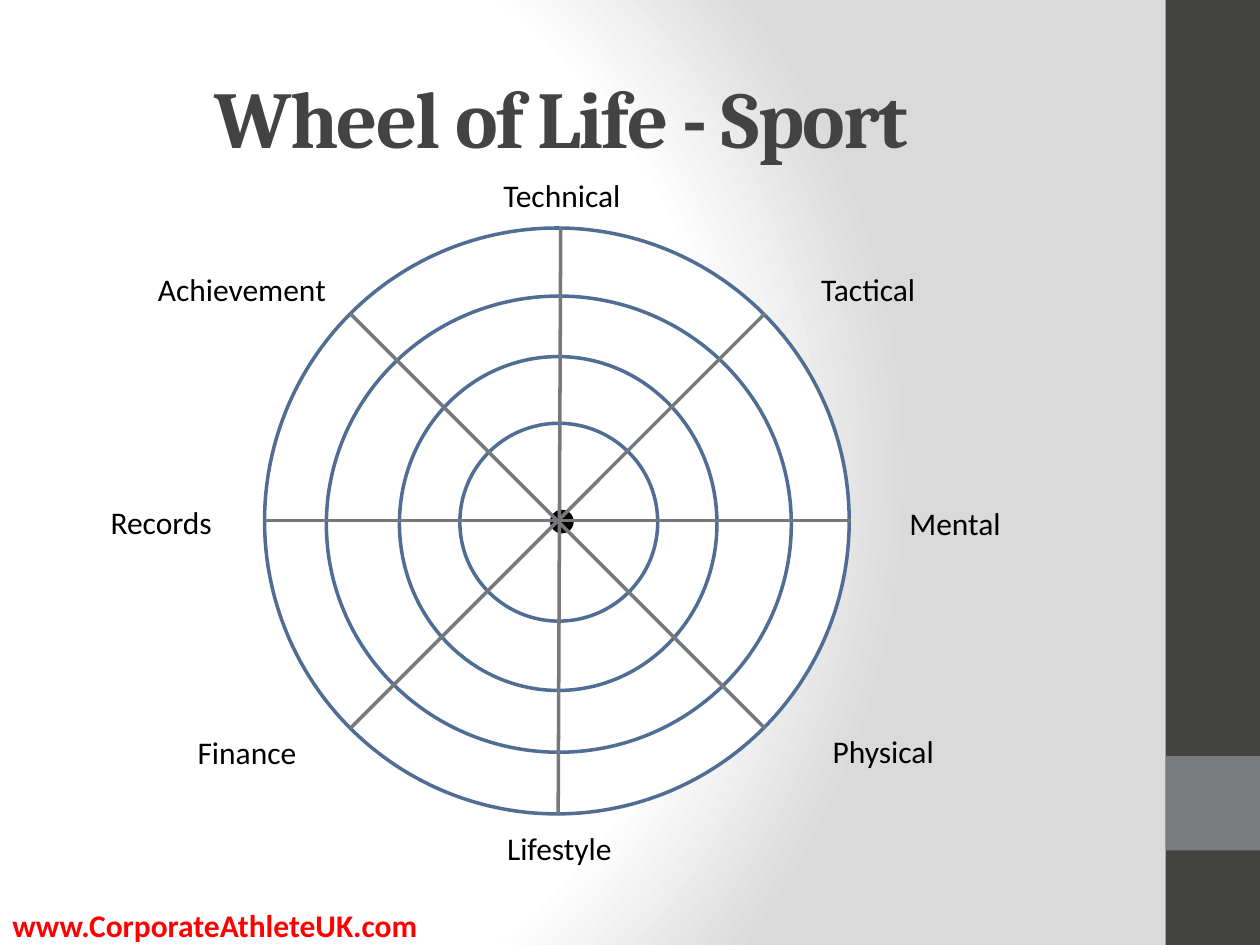
from dataclasses import dataclass

from lxml.etree import SubElement
from pptx import Presentation
from pptx.dml.color import RGBColor
from pptx.enum.shapes import MSO_CONNECTOR, MSO_SHAPE
from pptx.enum.text import MSO_ANCHOR, MSO_AUTO_SIZE, PP_ALIGN
from pptx.oxml import parse_xml
from pptx.oxml.ns import nsdecls, qn
from pptx.util import Inches, Pt


@dataclass(frozen=True)
class Theme:
    white: str = "FFFFFF"
    black: str = "000000"
    shade: str = "DADADA"
    dark: str = "434342"
    grey: str = "797B7E"
    ring: str = "506E94"
    spoke: str = "76787B"
    red: str = "FF0000"
    title_font: str = "Cambria"
    body_font: str = "Calibri"
    title_size: int = 46
    body_size: int = 18
    line_width: int = 2


THEME = Theme()

RINGS = [
    (2.1, 1.81, 4.64, 4.65),
    (2.59, 2.35, 3.69, 3.62),
    (3.17, 2.83, 2.52, 2.65),
    (3.65, 3.36, 1.57, 1.57),
]
HUB = (4.38, 4.06, 0.16, 0.16)
SPOKES = [
    (2.1, 4.13, 6.75, 4.13),
    (4.45, 1.81, 4.43, 6.46),
    (2.78, 2.49, 6.07, 5.78),
    (6.07, 2.49, 2.78, 5.78),
]
LABEL_WIDTH, LABEL_HEIGHT = 1.64, 0.4
LABELS = [
    ("Technical", 3.64, 1.35),
    ("Tactical", 6.07, 2.09),
    ("Mental", 6.76, 3.95),
    ("Physical", 6.19, 5.76),
    ("Lifestyle", 3.62, 6.53),
    ("Finance", 1.14, 5.77),
    ("Records", 0.46, 3.94),
    ("Achievement", 1.1, 2.09),
]


def rgb(color):
    return RGBColor.from_string(color)


def set_background(slide):
    """Fill the background with a circular gradient, white in the left half."""
    slide.background.fill.solid()
    bg = slide.element.find(".//" + qn("p:bgPr"))
    stops = "".join(
        f'<a:gs pos="{pos * 1000}"><a:srgbClr val="{color}"/></a:gs>'
        for pos, color in [(0, THEME.white), (75, THEME.white), (100, THEME.shade)]
    )
    gradient = parse_xml(
        f'<a:gradFill {nsdecls("a")} rotWithShape="1"><a:gsLst>{stops}</a:gsLst>'
        '<a:path path="circle">'
        '<a:fillToRect l="20000" t="50000" r="100000" b="50000"/>'
        "</a:path></a:gradFill>"
    )
    bg.replace(bg.find(qn("a:solidFill")), gradient)


def add_filled(slide, kind, box, fill, line=None):
    sp = slide.shapes.add_shape(kind, *map(Inches, box))
    sp.shadow.inherit = False
    sp.fill.solid()
    sp.fill.fore_color.rgb = rgb(fill)
    if line:
        sp.line.color.rgb = rgb(line)
        sp.line.width = Pt(THEME.line_width)
    else:
        sp.line.fill.background()


def add_spoke(slide, ends):
    line = slide.shapes.add_connector(MSO_CONNECTOR.STRAIGHT, *map(Inches, ends))
    line.line.color.rgb = rgb(THEME.spoke)
    line.line.width = Pt(THEME.line_width)
    SubElement(line.element.spPr, qn("a:effectLst"))


def add_text(slide, text, box, color=THEME.black, size=THEME.body_size,
             font=THEME.body_font, bold=False, align=PP_ALIGN.CENTER):
    """Add a one-line text box; return its frame and run for further styling."""
    tf = slide.shapes.add_textbox(*map(Inches, box)).text_frame
    tf.word_wrap = True
    tf.auto_size = MSO_AUTO_SIZE.SHAPE_TO_FIT_TEXT
    p = tf.paragraphs[0]
    p.alignment = align
    r = p.add_run()
    r.text = text
    r.font.name = font
    r.font.size = Pt(size)
    r.font.bold = bold
    r.font.color.rgb = rgb(color)
    return tf, r


def add_title(slide, text):
    tf, r = add_text(slide, text, (0.29, 0.3, 8.33, 1.25), THEME.dark,
                     THEME.title_size, THEME.title_font, bold=True)
    tf.auto_size = MSO_AUTO_SIZE.NONE
    tf.vertical_anchor = MSO_ANCHOR.MIDDLE
    r.font._element.set("spc", "-100")


def main():
    prs = Presentation()
    prs.slide_width, prs.slide_height = Inches(10), Inches(7.5)
    slide = prs.slides.add_slide(prs.slide_layouts[6])
    set_background(slide)

    add_filled(slide, MSO_SHAPE.RECTANGLE, (9.25, 0, 0.75, 7.5), THEME.dark)
    add_filled(slide, MSO_SHAPE.RECTANGLE, (9.25, 6, 0.75, 0.75), THEME.grey)
    add_text(slide, "www.CorporateAthleteUK.com", (0, 7.14, 4.45, 0.4),
             THEME.red, bold=True, align=PP_ALIGN.LEFT)

    for ring in RINGS:
        add_filled(slide, MSO_SHAPE.OVAL, ring, THEME.white, THEME.ring)
    add_filled(slide, MSO_SHAPE.OVAL, HUB, THEME.black, THEME.black)
    for spoke in SPOKES:
        add_spoke(slide, spoke)
    for text, left, top in LABELS:
        add_text(slide, text, (left, top, LABEL_WIDTH, LABEL_HEIGHT))
    add_title(slide, "Wheel of Life - Sport")

    prs.save("out.pptx")


if __name__ == "__main__":
    main()
